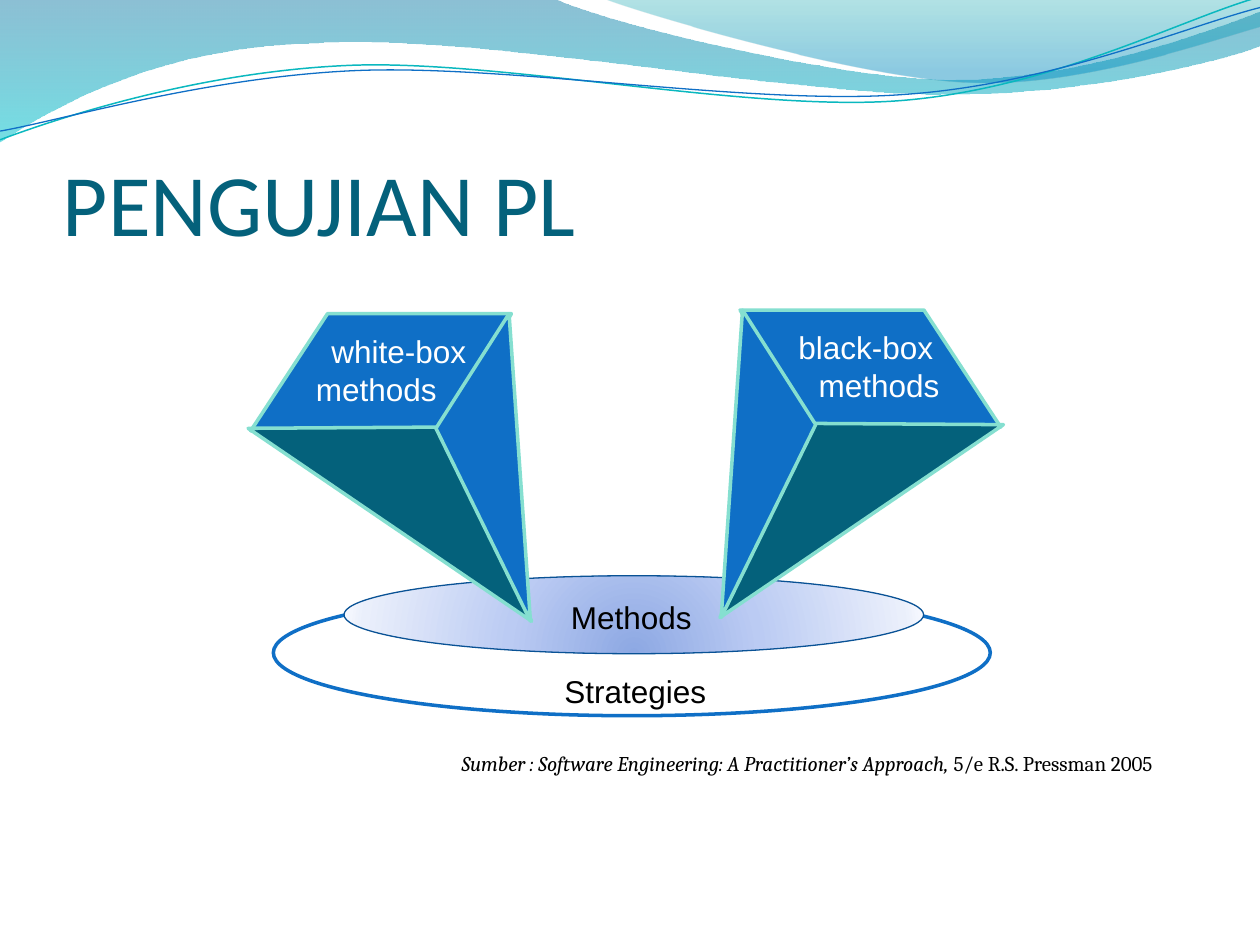
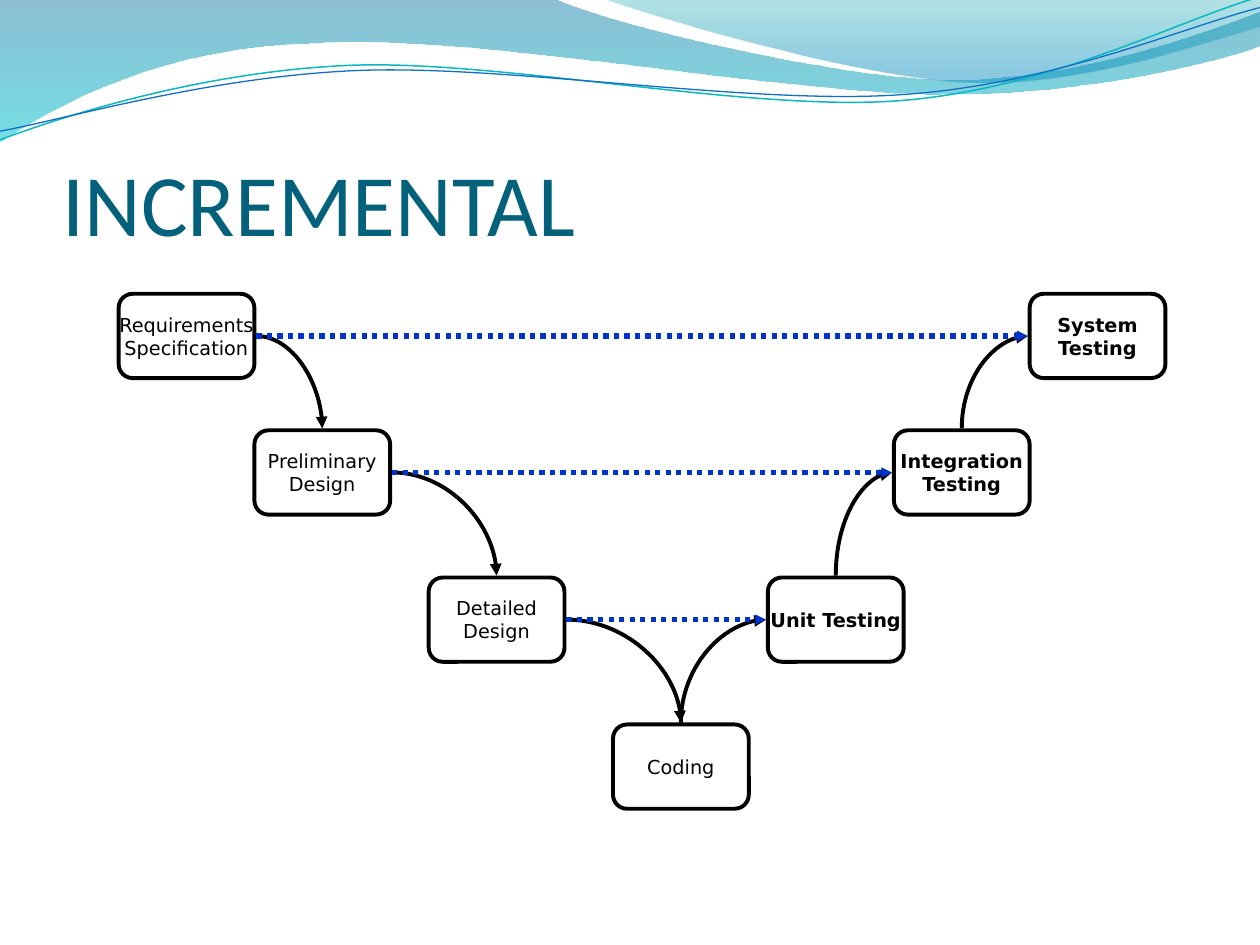
from dataclasses import dataclass

from lxml import etree
from pptx import Presentation
from pptx import util as u
from pptx.dml.color import RGBColor
from pptx.enum import dml, shapes, text
from pptx.oxml import ns


@dataclass(frozen=True)
class Theme:
    heading: str = "04617B"
    accent: str = "0F6FC6"
    edge: str = "85DFD0"
    teal: str = "0AB8BF"
    rim: str = "095295"
    trace: str = "0033CC"
    ink: str = "000000"
    paper: str = "FFFFFF"
    heading_font: str = "Calibri"
    label_font: str = "Arial"
    source_font: str = "Cambria"
    step_font: str = "DejaVu Sans"
    heading_size: int = 50
    label_size: int = 18
    source_size: int = 12
    step_size: int = 11


THEME = Theme()
ALIGN = text.PP_ALIGN
CONNECTOR = shapes.MSO_CONNECTOR
MIRROR_SUM, RIGHT_RISE = 715.2, 2.1
STEP_WIDTH, STEP_HEIGHT, LINK_GAP = 77.6, 48.2, 1.1

BROAD_WAVE = [
    (0, 0), (316.8, -0.7),
    (342.7, 12.2, 478.1, 45.4, 545.8, 45.4),
    (614.2, 45.4, 689.8, 18.7, 720, 6.5),
    (720.7, 25.9),
    (707.8, 31.7, 626.4, 54.7, 537.1, 54),
    (447.8, 54, 275, 20.2, 185, 24.5),
    (92.2, 25.9, 33.1, 59.8, -0.7, 81.4),
    (0, 0),
]
CORNER_WAVE = [
    (344.9, -0.7),
    (366.5, 7.9, 491, 44.6, 553.7, 46.8),
    (616.3, 49.7, 691.9, 23, 720, 15.1),
    (720, 0), (344.9, -0.7),
]
TEAL_STRAND = [
    (0, 79.9),
    (34.6, 67, 113.8, 41, 199.4, 37.4),
    (284.4, 33.8, 427, 64.1, 513.4, 57.6),
    (599.8, 51.1, 675.4, 10.8, 718.6, -1.4),
]
BLUE_STRAND = [
    (0, 74.9),
    (33.8, 69.1, 118.1, 43.9, 203.8, 40.3),
    (290.2, 36.7, 429.8, 60.5, 516.2, 54),
    (601.9, 48.2, 677.5, 15.1, 720, 4.3),
]
PYRAMID_FACES = [
    (THEME.accent, [(292.3, 179.3), (187.2, 179.3), (143.3, 246.2), (251.3, 246.2), (292.3, 179.3)]),
    (THEME.heading, [(141.8, 244.8), (303.8, 355), (249.1, 244.1), (141.8, 244.8)]),
    (THEME.accent, [(303.1, 355), (249.1, 244.8), (290.9, 179.3), (303.1, 355)]),
]
STEPS = {
    "requirements": (67.8, 167.9, ["Requirements\nSpecification"], False),
    "preliminary": (145.4, 245.9, ["Preliminary", "Design"], False),
    "detailed": (245, 330, ["Detailed", "Design"], False),
    "coding": (350.3, 414, ["Coding"], False),
    "unit": (438.8, 330, ["Unit Testing"], True),
    "integration": (510.8, 245.9, ["Integration", "Testing"], True),
    "system": (588.4, 167.9, ["System", "Testing"], True),
}
DESIGN_ORDER = ["requirements", "preliminary", "detailed", "coding"]
TEST_ORDER = ["coding", "unit", "integration", "system"]


def rgb(value):
    return RGBColor.from_string(value)


def add_xml(parent, tag, **attributes):
    return etree.SubElement(parent, ns.qn(tag), attributes)


def set_line(outlined, color, width):
    outlined.line.color.rgb = rgb(color)
    outlined.line.width = u.Pt(width)


def paint(shape, fill=None, line=None, width=1):
    shape.shadow.inherit = False
    if fill:
        shape.fill.solid()
        shape.fill.fore_color.rgb = rgb(fill)
    else:
        shape.fill.background()
    if line:
        set_line(shape, line, width)
    else:
        shape.line.fill.background()


def set_gradient(shape, stops, radial=False):
    properties = shape._element.spPr
    blank = properties.find(ns.qn("a:noFill"))
    gradient = etree.Element(ns.qn("a:gradFill"), rotWithShape="1")
    stop_list = add_xml(gradient, "a:gsLst")
    for position, color, opacity in stops:
        stop = add_xml(stop_list, "a:gs", pos=str(position * 1000))
        tone = add_xml(stop, "a:srgbClr", val=color)
        if opacity < 100:
            add_xml(tone, "a:alpha", val=str(opacity * 1000))
    if radial:
        spread = add_xml(gradient, "a:path", path="circle")
        add_xml(spread, "a:fillToRect", l="50000", t="130000", r="50000", b="-30000")
    else:
        add_xml(gradient, "a:lin", ang="5400000", scaled="1")
    properties.replace(blank, gradient)


def bend_segments(shape, segments):
    strokes = iter(list(shape._element.iter(ns.qn("a:lnTo"))))
    for segment in segments:
        parts = [next(strokes) for _ in range(len(segment) // 2)]
        if len(parts) == 3:
            curve = etree.Element(ns.qn("a:cubicBezTo"))
            parts[0].addprevious(curve)
            for part in parts:
                curve.append(part[0])
                part.getparent().remove(part)


def add_outline(slide, segments, closed=False, **paints):
    places = [(u.Pt(x), u.Pt(y)) for segment in segments
              for x, y in zip(segment[::2], segment[1::2])]
    builder = slide.shapes.build_freeform(*places[0])
    builder.add_line_segments(places[1:], close=closed)
    outline = builder.convert_to_shape()
    bend_segments(outline, segments[1:])
    paint(outline, **paints)
    return outline


def add_preset(slide, kind, box, **paints):
    preset = slide.shapes.add_shape(kind, *map(u.Pt, box))
    paint(preset, **paints)
    return preset


def add_run(paragraph, words, font, size, color, bold=False, italic=False):
    run = paragraph.add_run()
    run.text = words
    run.font.name, run.font.size = font, u.Pt(size)
    run.font.color.rgb = rgb(color)
    run.font.bold, run.font.italic = bold, italic


def add_text_box(slide, box, wrap=True):
    frame = slide.shapes.add_textbox(*map(u.Pt, box)).text_frame
    frame.word_wrap = wrap
    return frame


def add_label(slide, box, lines, color, wrap=True):
    frame = add_text_box(slide, box, wrap)
    frame.auto_size = text.MSO_AUTO_SIZE.SHAPE_TO_FIT_TEXT
    for index, (words, align, indent) in enumerate(lines):
        paragraph = frame.add_paragraph() if index else frame.paragraphs[0]
        paragraph.alignment = align
        if indent:
            paragraph._p.get_or_add_pPr().set("marL", str(u.Pt(indent)))
        add_run(paragraph, words, THEME.label_font, THEME.label_size, color)


def start_slide(deck, heading):
    slide = deck.slides.add_slide(deck.slide_layouts[6])
    broad = add_outline(slide, BROAD_WAVE, closed=True)
    set_gradient(broad, [(0, "0074A1", 45), (100, "00C6CF", 55)])
    corner = add_outline(slide, CORNER_WAVE, closed=True)
    set_gradient(corner, [(0, "00A1A9", 30), (80, "008BBF", 45)])
    add_outline(slide, TEAL_STRAND, line=THEME.teal, width=0.85)
    add_outline(slide, BLUE_STRAND, line=THEME.accent, width=0.75)
    frame = add_text_box(slide, (36, 55.4, 648, 90))
    frame.margin_left = frame.margin_right = frame.margin_bottom = 0
    frame.vertical_anchor = text.MSO_ANCHOR.BOTTOM
    add_run(frame.paragraphs[0], heading, THEME.heading_font, THEME.heading_size, THEME.heading)
    return slide


def add_pyramid(slide, mirrored=False):
    for color, corners in PYRAMID_FACES:
        if mirrored:
            corners = [(MIRROR_SUM - x, y - RIGHT_RISE) for x, y in corners]
        add_outline(slide, corners, fill=color, line=THEME.edge, width=2)


def add_step(slide, left, top, lines, bold):
    step = add_preset(slide, shapes.MSO_SHAPE.ROUNDED_RECTANGLE,
                      (left, top, STEP_WIDTH, STEP_HEIGHT), line=THEME.ink, width=2.25)
    frame = step.text_frame
    frame.word_wrap = False
    frame.vertical_anchor = text.MSO_ANCHOR.MIDDLE
    for index, words in enumerate(lines):
        paragraph = frame.add_paragraph() if index else frame.paragraphs[0]
        paragraph.alignment = ALIGN.CENTER
        for row, part in enumerate(words.split("\n")):
            if row:
                paragraph.add_line_break()
            add_run(paragraph, part, THEME.step_font, THEME.step_size, THEME.ink, bold)


def step_ports(key):
    left, top = STEPS[key][:2]
    middle = top + STEP_HEIGHT / 2
    return {"left": (left - LINK_GAP, middle),
            "right": (left + STEP_WIDTH + LINK_GAP, middle),
            "top": (left + STEP_WIDTH / 2, top - LINK_GAP)}


def add_link(slide, kind, start, end, color, width, **head):
    link = slide.shapes.add_connector(kind, *map(u.Pt, start + end))
    set_line(link, color, width)
    if kind == CONNECTOR.STRAIGHT:
        link.line.dash_style = dml.MSO_LINE.ROUND_DOT
    properties = link._element.spPr
    add_xml(properties.find(ns.qn("a:ln")), "a:tailEnd", type="triangle", **head)
    add_xml(properties, "a:effectLst")
    return properties


def add_bend(slide, start, end, rising=False):
    if rising:
        (x1, y1), (x2, y2) = start, end
        center_x, center_y = (x1 + x2) / 2, (y1 + y2) / 2
        reach_x, reach_y = (y1 - y2) / 2, (x2 - x1) / 2
        start = (center_x - reach_x, center_y - reach_y)
        end = (center_x + reach_x, center_y + reach_y)
    properties = add_link(slide, CONNECTOR.CURVE, start, end, THEME.ink, 2.25)
    properties.find(ns.qn("a:prstGeom")).set("prst", "curvedConnector2")
    if rising:
        properties.find(ns.qn("a:xfrm")).set("rot", "16200000")


def build_testing_slide(deck):
    slide = start_slide(deck, "PENGUJIAN PL")
    oval = shapes.MSO_SHAPE.OVAL
    add_preset(slide, oval, (156.2, 337, 409.7, 72), fill=THEME.paper, line=THEME.accent, width=2)
    methods = add_preset(slide, oval, (196.6, 329, 331.2, 44.6), line=THEME.rim, width=0.75)
    set_gradient(methods, [(0, "8DA8E3", 100), (43, "BBCBF3", 100),
                           (93, "EAEFFB", 100), (100, "F7F9FF", 100)], radial=True)
    add_pyramid(slide)
    add_pyramid(slide, mirrored=True)
    add_label(slide, (319.2, 338.4, 84.2, 28.8), [("Methods", ALIGN.LEFT, 0)], THEME.ink, wrap=False)
    add_label(slide, (315.4, 380.2, 96.5, 28.8), [("Strategies", ALIGN.LEFT, 0)], THEME.ink, wrap=False)
    add_label(slide, (173.5, 186.2, 100, 50.4),
              [("white-box", ALIGN.RIGHT, 0), ("methods", ALIGN.LEFT, 0)], THEME.paper)
    add_label(slide, (444.8, 184, 100, 50.4),
              [("black-box", ALIGN.CENTER, 0), ("methods", ALIGN.CENTER, 15)], THEME.paper)
    source = add_text_box(slide, (69.5, 427, 596.2, 20.2)).paragraphs[0]
    source.alignment = ALIGN.RIGHT
    source.line_spacing = 0.9
    for words, italic in [("Sumber : Software Engineering: A Practitioner’s Approach,", True),
                          (" 5/e R.S. Pressman 2005", False)]:
        add_run(source, words, THEME.source_font, THEME.source_size, THEME.ink, italic=italic)


def build_incremental_slide(deck):
    slide = start_slide(deck, "INCREMENTAL")
    for details in STEPS.values():
        add_step(slide, *details)
    ports = {key: step_ports(key) for key in STEPS}
    for upper, lower in zip(DESIGN_ORDER, DESIGN_ORDER[1:]):
        add_bend(slide, ports[upper]["right"], ports[lower]["top"])
    for lower, upper in zip(TEST_ORDER, TEST_ORDER[1:]):
        add_bend(slide, ports[lower]["top"], ports[upper]["left"], rising=True)
    for design, test in zip(DESIGN_ORDER, reversed(TEST_ORDER[1:])):
        add_link(slide, CONNECTOR.STRAIGHT, ports[design]["right"], ports[test]["left"],
                 THEME.trace, 3, w="sm", len="sm")


def main():
    deck = Presentation()
    deck.slide_width, deck.slide_height = u.Pt(720), u.Pt(540)
    build_testing_slide(deck)
    build_incremental_slide(deck)
    deck.save("out.pptx")


if __name__ == "__main__":
    main()
